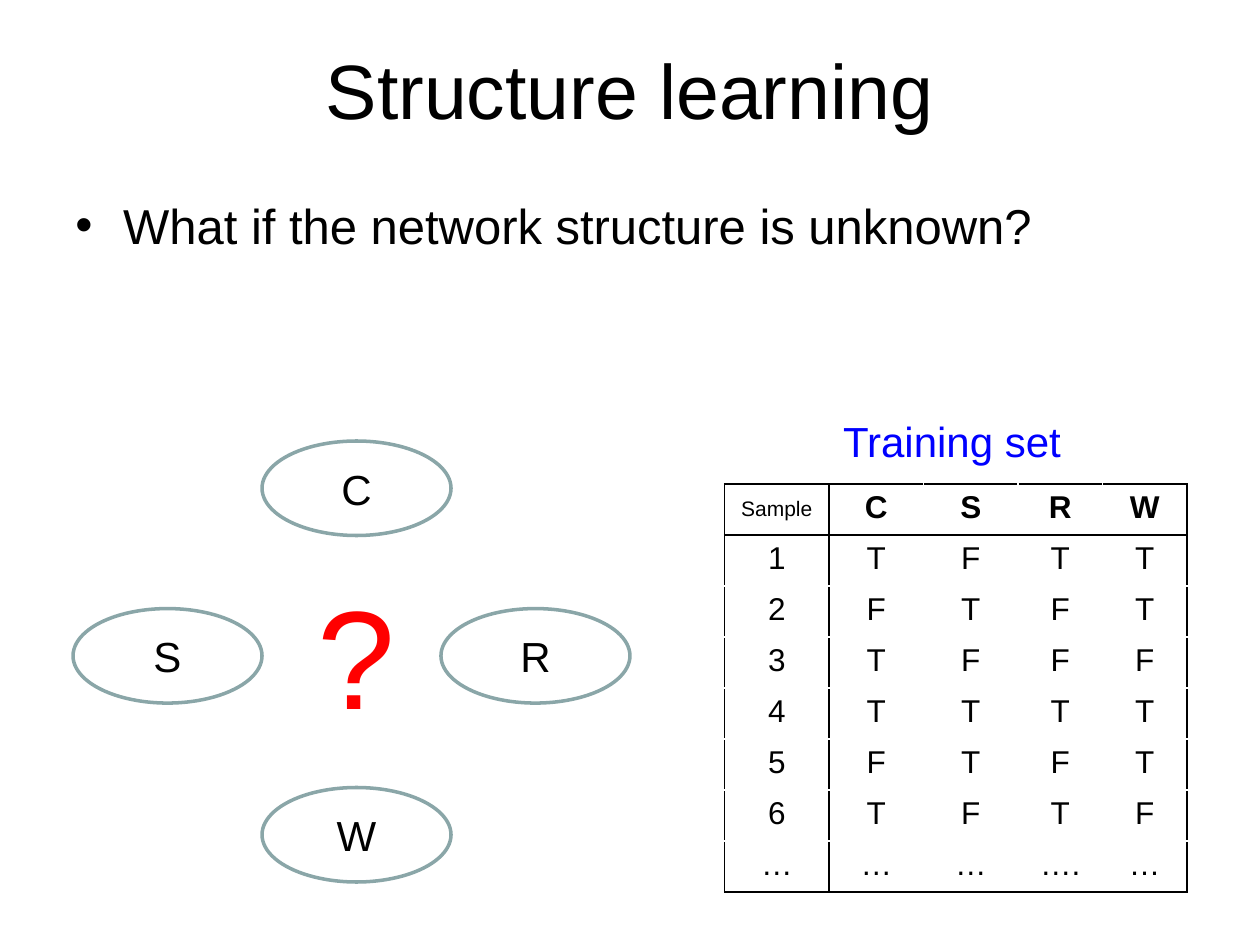
from lxml.etree import SubElement
from pptx import Presentation
from pptx.dml.color import RGBColor
from pptx.enum.shapes import MSO_SHAPE
from pptx.enum.text import MSO_ANCHOR as Anchor, MSO_AUTO_SIZE as AutoSize, PP_ALIGN as Align
from pptx.oxml.ns import qn
from pptx.util import Inches, Pt

COLORS = {"text": "000000", "paper": "FFFFFF", "node": "8AA6A8",
          "caption": "0000FF", "question": "FF0000"}


def style(paragraph, size, color="text", align=Align.CENTER, bold=False):
    paragraph.alignment = align
    for run in paragraph.runs:
        run.font.name = "Arial"
        run.font.size = Pt(size)
        run.font.bold = bold
        run.font.color.rgb = RGBColor.from_string(COLORS[color])


def add_border(cell, side, color):
    """Draw a 1 pt line on one side (L, R, T or B) of a table cell."""
    line = SubElement(cell._tc.get_or_add_tcPr(), qn(f"a:ln{side}"), w=str(Pt(1)))
    fill = SubElement(line, qn("a:solidFill"))
    SubElement(fill, qn("a:srgbClr"), val=COLORS[color])


prs = Presentation()
prs.slide_width, prs.slide_height = Inches(10), Inches(7.5)
slide = prs.slides.add_slide(prs.slide_layouts[5])
shapes = slide.shapes

title = shapes.title
title.left, title.top = Inches(0.5), Inches(0.08)
title.width, title.height = Inches(9), Inches(1.25)
title.text_frame.text = "Structure learning"
title.text_frame.vertical_anchor = Anchor.MIDDLE
style(title.text_frame.paragraphs[0], 44)

# Bulleted question
body = shapes.add_textbox(Inches(0.5), Inches(1.5), Inches(9), Inches(4.95)).text_frame
body.word_wrap = True
bullet = body.paragraphs[0]
bullet.text = "What if the network structure is unknown?"
bullet_props = bullet._p.get_or_add_pPr()
bullet_props.set("marL", str(Inches(0.38)))
bullet_props.set("indent", str(Inches(-0.38)))
SubElement(bullet_props, qn("a:buFont"), typeface="Arial")
SubElement(bullet_props, qn("a:buChar"), char="•")
style(bullet, 28, align=Align.LEFT)

# Training samples
samples = [
    ["Sample", "C", "S", "R", "W"],
    ["1", "T", "F", "T", "T"],
    ["2", "F", "T", "F", "T"],
    ["3", "T", "F", "F", "F"],
    ["4", "T", "T", "T", "T"],
    ["5", "F", "T", "F", "T"],
    ["6", "T", "F", "T", "F"],
    ["…", "…", "…", "….", "…"],
]
column_widths = [0.83, 0.75, 0.75, 0.67, 0.67]
last_row, last_col = len(samples) - 1, len(column_widths) - 1
table = shapes.add_table(len(samples), len(column_widths), Inches(5.75), Inches(3.84),
                         Inches(3.67), Inches(3.24)).table
table.first_row = table.horz_banding = False
for column, width in zip(table.columns, column_widths):
    column.width = Inches(width)
for r, values in enumerate(samples):
    for c, value in enumerate(values):
        cell = table.cell(r, c)
        cell.text_frame.text = value
        corner = r == 0 and c == 0
        style(cell.text_frame.paragraphs[0], 12 if corner else 18,
              bold=r == 0 and not corner)
        if corner:
            cell.vertical_anchor = Anchor.MIDDLE
        # Black frame, header rule and first-column rule; white elsewhere
        ruled = {"L": c <= 1, "R": c in (0, last_col),
                 "T": r <= 1, "B": r in (0, last_row)}
        for side, is_ruled in ruled.items():
            add_border(cell, side, "text" if is_ruled else "paper")
        cell.fill.solid()
        cell.fill.fore_color.rgb = RGBColor.from_string(COLORS["paper"])

# Unconnected network nodes
nodes = {"C": (2.08, 3.5), "S": (0.58, 4.83), "R": (3.5, 4.83), "W": (2.08, 6.25)}
for variable, (left, top) in nodes.items():
    node = shapes.add_shape(MSO_SHAPE.OVAL, Inches(left), Inches(top),
                            Inches(1.5), Inches(0.75))
    node.shadow.inherit = False
    node.fill.solid()
    node.fill.fore_color.rgb = RGBColor.from_string(COLORS["paper"])
    node.line.color.rgb = RGBColor.from_string(COLORS["node"])
    node.line.width = Pt(2)
    node.text_frame.text = variable
    node.text_frame.vertical_anchor = Anchor.MIDDLE
    style(node.text_frame.paragraphs[0], 24)

# Table caption and the question mark between the nodes
labels = [
    ("Training set", 6.58, 3.25, 1.95, 0.5, 24, "caption", Align.CENTER),
    ("?", 2.42, 4.47, 0.83, 1.45, 80, "question", Align.LEFT),
]
for text, left, top, width, height, size, color, align in labels:
    label = shapes.add_textbox(Inches(left), Inches(top), Inches(width),
                               Inches(height)).text_frame
    label.word_wrap = False
    label.auto_size = AutoSize.SHAPE_TO_FIT_TEXT
    label.text = text
    style(label.paragraphs[0], size, color, align)

prs.save("out.pptx")
